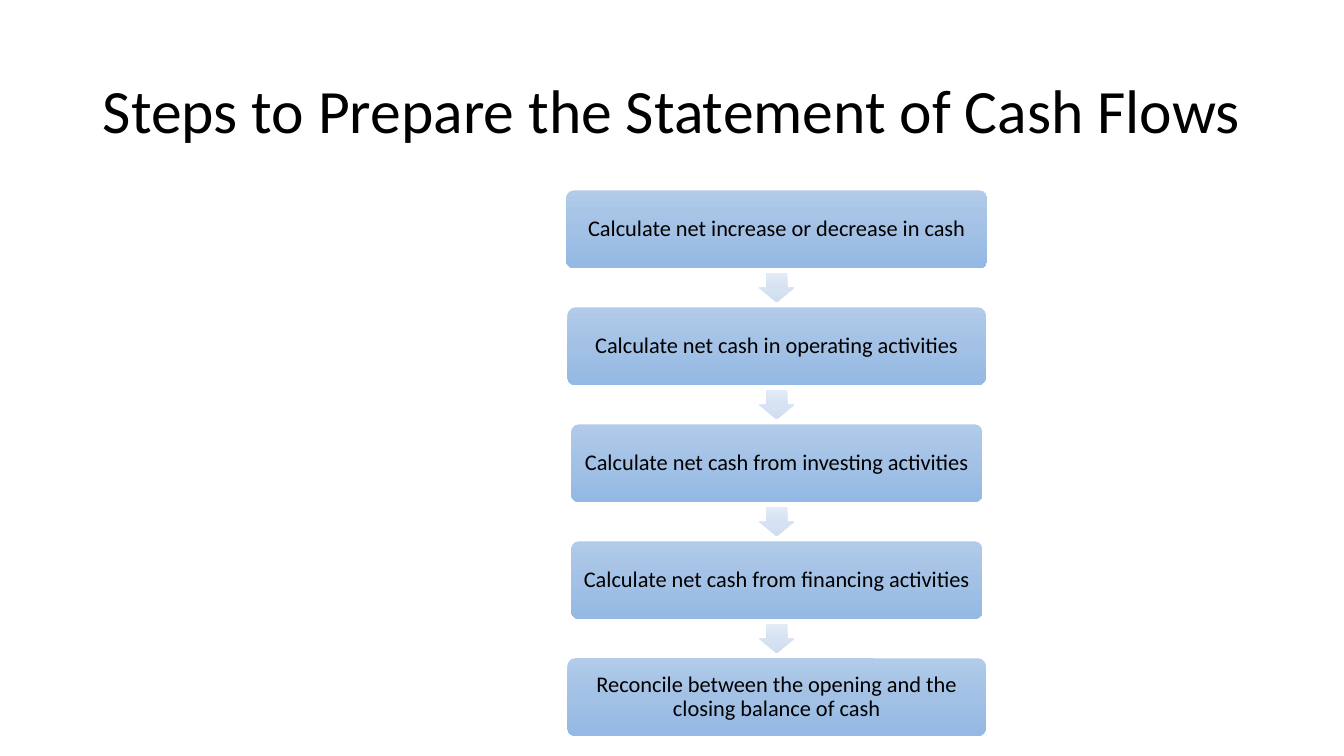
from dataclasses import dataclass

from lxml import etree
from pptx import Presentation
from pptx import util as u
from pptx.dml.color import RGBColor
from pptx.enum import shapes, text
from pptx.oxml.ns import qn

SLIDE_WIDTH, SLIDE_HEIGHT = u.Inches(13.333), u.Inches(7.5)
FONT, TEXT_COLOR = "Calibri", "000000"
BOX_GRADIENT = ("B1CBE9", "A3C1E5", "93B9E4")
ARROW_GRADIENT = ("E3EBF6", "D6E2F2", "D0DEF1")

# Flow layout, in percent of the slide's width or height
FLOW_CENTER = 57.79
FIRST_MIDDLE = 30.33
STEP_PITCH = 15.47
BOX_HEIGHT = 10.27
ARROW_WIDTH, ARROW_HEIGHT = 2.18, 4.67


@dataclass
class Step:
    label: str
    width: float


STEPS = [
    Step("Calculate net increase or decrease in cash", 31.35),
    Step("Calculate net cash in operating activities", 31.13),
    Step("Calculate net cash from investing activities", 30.6),
    Step("Calculate net cash from financing activities", 30.6),
    Step("Reconcile between the opening and the closing balance of cash", 31.13),
]


def across(percent: float) -> int:
    return round(SLIDE_WIDTH * percent / 100)


def down(percent: float) -> int:
    return round(SLIDE_HEIGHT * percent / 100)


def color(hex_string: str) -> RGBColor:
    return RGBColor.from_string(hex_string)


def format_text(frame, size: float, alignment) -> None:
    frame.word_wrap = True
    frame.auto_size = text.MSO_AUTO_SIZE.NONE
    frame.vertical_anchor = text.MSO_ANCHOR.MIDDLE
    paragraph = frame.paragraphs[0]
    paragraph.alignment = alignment
    paragraph.line_spacing = 0.9
    font = paragraph.runs[0].font
    font.name, font.size = FONT, u.Pt(size)
    font.color.rgb = color(TEXT_COLOR)


def fill_downwards(shape, gradient: tuple[str, ...]) -> None:
    """Blend the colours from top to bottom, whatever the shape's rotation."""
    shape.fill.gradient()
    shape.fill.gradient_angle = 270
    fill = shape._element.spPr.find(qn("a:gradFill"))
    fill.set("rotWithShape", "0")
    stops = fill.find(qn("a:gsLst"))
    for stop in list(stops):
        stops.remove(stop)
    for index, hex_string in enumerate(gradient):
        position = str(100000 * index // (len(gradient) - 1))
        stop = etree.SubElement(stops, qn("a:gs"), pos=position)
        etree.SubElement(stop, qn("a:srgbClr"), val=hex_string)


def add_flow_shape(slide, kind, middle: float, width: float, height: float,
                   gradient: tuple[str, ...]):
    """Add a shape centred on the flow's axis."""
    shape = slide.shapes.add_shape(
        kind, across(FLOW_CENTER - width / 2), down(middle - height / 2),
        across(width), down(height))
    shape.shadow.inherit = False
    shape.line.fill.background()
    fill_downwards(shape, gradient)
    return shape


def add_step(slide, step: Step, middle: float) -> None:
    box = add_flow_shape(slide, shapes.MSO_SHAPE.ROUNDED_RECTANGLE, middle,
                         step.width, BOX_HEIGHT, BOX_GRADIENT)
    box.adjustments[0] = 0.1
    frame = box.text_frame
    frame.text = step.label
    frame.margin_left = frame.margin_right = u.Inches(0.09)
    frame.margin_top = frame.margin_bottom = u.Inches(0.09)
    format_text(frame, 16, text.PP_ALIGN.CENTER)


def add_arrow(slide, middle: float) -> None:
    arrow = add_flow_shape(slide, shapes.MSO_SHAPE.RIGHT_ARROW, middle,
                           ARROW_WIDTH, ARROW_HEIGHT, ARROW_GRADIENT)
    arrow.rotation = 90
    arrow.adjustments[0], arrow.adjustments[1] = 0.6, 0.5


def main() -> None:
    presentation = Presentation()
    presentation.slide_width, presentation.slide_height = SLIDE_WIDTH, SLIDE_HEIGHT
    slide = presentation.slides.add_slide(presentation.slide_layouts[5])

    # Title
    title = slide.shapes.title
    title.left, title.top = across(6.9), down(5.33)
    title.width, title.height = across(86.25), down(19.33)
    title.text_frame.text = "Steps to Prepare the Statement of Cash Flows"
    format_text(title.text_frame, 44, text.PP_ALIGN.LEFT)

    # Steps, with an arrow halfway between neighbours
    for index, step in enumerate(STEPS):
        middle = FIRST_MIDDLE + index * STEP_PITCH
        if index:
            add_arrow(slide, middle - STEP_PITCH / 2)
        add_step(slide, step, middle)

    presentation.save("out.pptx")


if __name__ == "__main__":
    main()
